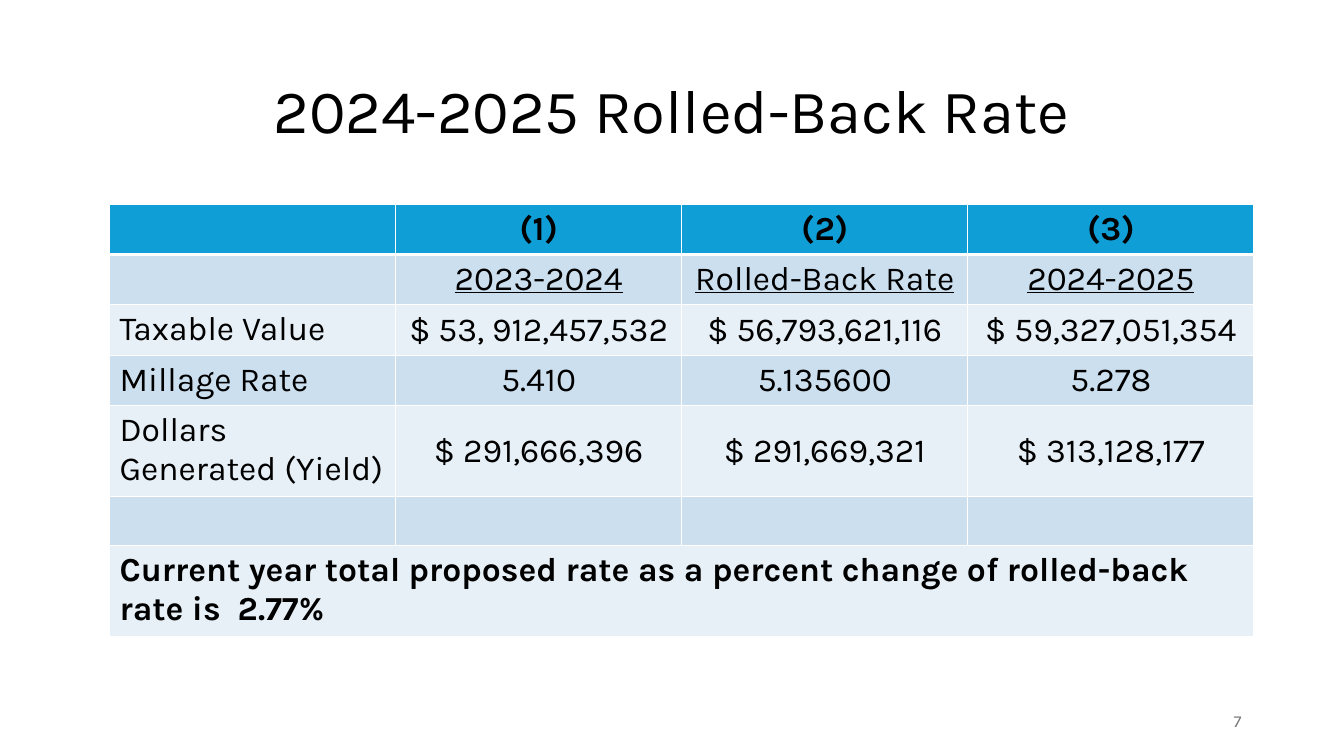
from lxml import etree
from pptx import Presentation
from pptx import util as u
from pptx.dml import color
from pptx.enum import text
from pptx.oxml import ns

theme = {
    "face": "Karla",
    "ink": "000000", "muted": "797979", "rule": "FFFFFF",
    "header": "0F9ED5", "bands": ["E7F0F7", "CCDFEF"],
    "title_size": 44, "table_size": 24, "number_size": 12,
}


def write(frame, words, size, ink, align, **extra):
    frame.word_wrap = True
    paragraph = frame.paragraphs[0]
    paragraph.alignment = align
    run = paragraph.add_run()
    run.text = words
    look = {"name": theme["face"], "size": u.Pt(size), **extra}
    for key, value in look.items():
        setattr(run.font, key, value)
    run.font.color.rgb = color.RGBColor.from_string(ink)
    return paragraph


def set_borders(cell, bottom_width):
    properties = cell._tc.get_or_add_tcPr()
    for side, width in {"L": 1, "R": 1, "T": 1, "B": bottom_width}.items():
        line = etree.SubElement(properties, ns.qn(f"a:ln{side}"), w=str(u.Pt(width)))
        fill = etree.SubElement(line, ns.qn("a:solidFill"))
        etree.SubElement(fill, ns.qn("a:srgbClr"), val=theme["rule"])


deck = Presentation()
deck.slide_width, deck.slide_height = u.Cm(33.87), u.Cm(19.05)
slide = deck.slides.add_slide(deck.slide_layouts[6])
align = text.PP_ALIGN

title = slide.shapes.add_textbox(u.Cm(2.33), u.Cm(1.01), u.Cm(29.21), u.Cm(3.68)).text_frame
title.vertical_anchor = text.MSO_ANCHOR.MIDDLE
heading = write(title, "2024-2025 Rolled-Back Rate", theme["title_size"], theme["ink"], align.CENTER)
heading.line_spacing = 0.9

rates = [
    ["", "(1)", "(2)", "(3)"],
    ["", "2023-2024", "Rolled-Back Rate", "2024-2025"],
    ["Taxable Value", "$ 53, 912,457,532", "$ 56,793,621,116", "$ 59,327,051,354"],
    ["Millage Rate", "5.410", "5.135600", "5.278"],
    ["Dollars Generated (Yield)", "$ 291,666,396", "$ 291,669,321", "$ 313,128,177"],
    ["", "", "", ""],
    ["Current year total proposed rate as a percent change of rolled-back rate is  2.77%", "", "", ""],
]
single_line, double_line = 1.24, 2.23
heights = [single_line] * 4 + [double_line, single_line, double_line]
last = len(rates) - 1

rate_table = slide.shapes.add_table(
    len(rates), 4, u.Cm(2.76), u.Cm(5.14), u.Cm(28.84), u.Cm(sum(heights))
).table
for column in rate_table.columns:
    column.width = u.Cm(7.21)

for r, (values, height) in enumerate(zip(rates, heights)):
    rate_table.rows[r].height = u.Cm(height)
    for c, value in enumerate(values):
        cell = rate_table.cell(r, c)
        set_borders(cell, 3 if r == 0 else 1)
        cell.fill.solid()
        shade = theme["header"] if r == 0 else theme["bands"][r % 2]
        cell.fill.fore_color.rgb = color.RGBColor.from_string(shade)
        if c > 0:
            cell.vertical_anchor = text.MSO_ANCHOR.MIDDLE
        if value:
            write(cell.text_frame, value, theme["table_size"], theme["ink"],
                  align.CENTER if c else align.LEFT,
                  bold=r in (0, last), underline=r == 1)

rate_table.cell(last, 0).merge(rate_table.cell(last, 3))

page = slide.shapes.add_textbox(u.Cm(23.92), u.Cm(17.66), u.Cm(7.62), u.Cm(1.01)).text_frame
page.vertical_anchor = text.MSO_ANCHOR.MIDDLE
write(page, "7", theme["number_size"], theme["muted"], align.RIGHT)

deck.save("out.pptx")
